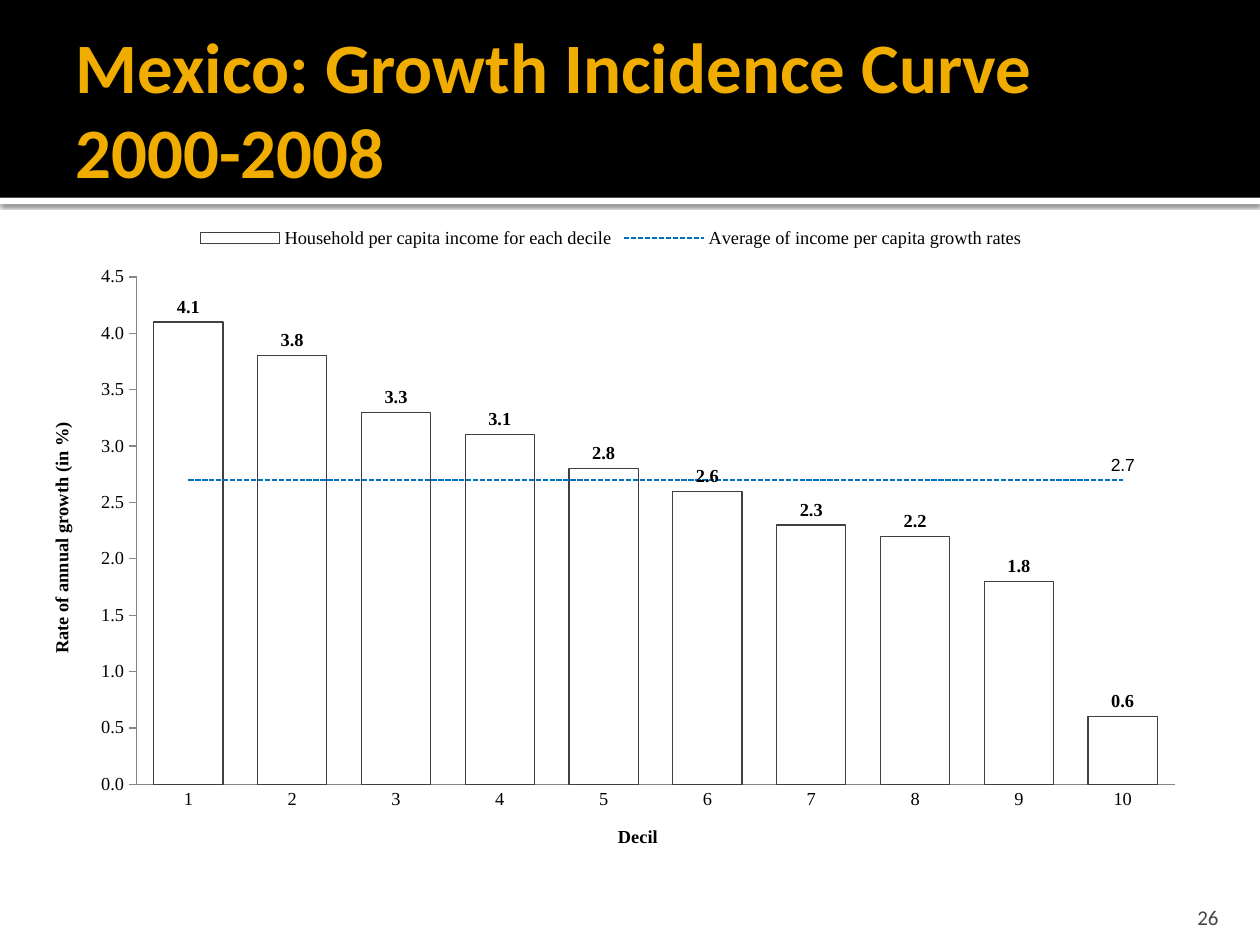
from dataclasses import dataclass

from lxml import etree
from pptx import Presentation, util as u
from pptx.chart.data import CategoryChartData
from pptx.dml.color import RGBColor
from pptx.enum import chart as charts, dml, shapes, text
from pptx.oxml import parse_xml
from pptx.oxml.ns import nsdecls, qn


@dataclass(frozen=True)
class Theme:
    """Colours, fonts and type sizes of the slide."""
    band: str = "000000"
    paper: str = "FFFFFF"
    title: str = "F0AD00"
    number: str = "454545"
    ink: str = "000000"
    outline: str = "404040"
    axis: str = "868686"
    average: str = "0070C0"
    heading_font: str = "Calibri"
    chart_font: str = "Times New Roman"
    point_font: str = "Arial"
    title_size: float = 40.5
    number_size: float = 12
    chart_size: float = 10.5
    point_size: float = 10


THEME = Theme()
VALUE_FORMAT = "#,##0.0"
DECILE_GROWTH = (4.1, 3.8, 3.3, 3.1, 2.8, 2.6, 2.3, 2.2, 1.8, 0.6)
AVERAGE_GROWTH = 2.7


def inches(*lengths):
    """Convert several lengths to inches."""
    return [u.Inches(length) for length in lengths]


def style_font(font, name, size, color, bold=False):
    """Set the face, size, colour and weight of a font."""
    font.name, font.size, font.bold = name, u.Pt(size), bold
    font.color.rgb = RGBColor.from_string(color)


def style_line(line, color, width):
    """Set the colour and width of a line."""
    line.color.rgb = RGBColor.from_string(color)
    line.width = u.Pt(width)


def set_margins(frame, left, top, right, bottom):
    """Set the four insets of a text frame."""
    frame.margin_left, frame.margin_top, frame.margin_right, frame.margin_bottom = inches(
        left, top, right, bottom)


def add_band(slide, box, color):
    """Add a plain filled rectangle."""
    band = slide.shapes.add_shape(shapes.MSO_SHAPE.RECTANGLE, *inches(*box))
    band.shadow.inherit = False
    band.fill.solid()
    band.fill.fore_color.rgb = RGBColor.from_string(color)
    band.line.fill.background()
    return band


def add_header(slide, box, wording):
    """Place the dark band, its shadowed edge and the title."""
    left, top, width, height = box
    edge = add_band(slide, (left, top + height, width, 0.05), THEME.paper)
    effects = edge.element.spPr.find(qn("a:effectLst"))
    effects.append(parse_xml(
        f'<a:outerShdw {nsdecls("a")} blurRad="{u.Pt(2.5)}" dist="{u.Pt(0.8)}" dir="5400000">'
        f'<a:srgbClr val="{THEME.band}"><a:alpha val="60000"/></a:srgbClr></a:outerShdw>'))
    add_band(slide, box, THEME.band)

    title = slide.shapes.title
    slide.shapes.element.append(title.element)
    title.left, title.top, title.width, title.height = inches(
        left + 0.5, top + 0.17, width - 1, height - 0.2)
    frame = title.text_frame
    frame.word_wrap = True
    frame.vertical_anchor = text.MSO_ANCHOR.MIDDLE
    set_margins(frame, 0.1, 0.05, 0.05, 0.05)
    paragraph = frame.paragraphs[0]
    paragraph.alignment = text.PP_ALIGN.LEFT
    paragraph.line_spacing = 1.0
    run = paragraph.add_run()
    run.text = wording
    style_font(run.font, THEME.heading_font, THEME.title_size, THEME.title, True)


def add_page_number(slide, box, number):
    """Place the page number at the bottom right."""
    frame = slide.shapes.add_textbox(*inches(*box)).text_frame
    frame.word_wrap = True
    frame.vertical_anchor = text.MSO_ANCHOR.BOTTOM
    set_margins(frame, 0.1, 0.05, 0.1, 0)
    paragraph = frame.paragraphs[0]
    paragraph.alignment = text.PP_ALIGN.RIGHT
    run = paragraph.add_run()
    run.text = number
    style_font(run.font, THEME.heading_font, THEME.number_size, THEME.number)


def move_last_series_to_line(chart):
    """Turn the last column series into a line on the same axes."""
    bar_plot = chart.element.find(".//" + qn("c:barChart"))
    series = bar_plot.findall(qn("c:ser"))[-1]
    for inversion in series.findall(qn("c:invertIfNegative")):
        series.remove(inversion)
    line_plot = parse_xml(
        f'<c:lineChart {nsdecls("c")}><c:grouping val="standard"/>'
        '<c:varyColors val="0"/><c:marker val="1"/></c:lineChart>')
    line_plot.insert(2, series)
    for axis in bar_plot.findall(qn("c:axId")):
        etree.SubElement(line_plot, qn("c:axId")).set("val", axis.get("val"))
    bar_plot.addnext(line_plot)


def set_plot_layout(chart, x, y, w, h):
    """Fix the inner plot area as fractions of the chart."""
    area = chart.element.find(".//" + qn("c:plotArea"))
    for old in area.findall(qn("c:layout")):
        area.remove(old)
    sizes = "".join(f'<c:{key} val="{value}"/>' for key, value in zip("xywh", (x, y, w, h)))
    area.insert(0, parse_xml(
        f'<c:layout {nsdecls("c")}><c:manualLayout><c:layoutTarget val="inner"/>'
        f'<c:xMode val="edge"/><c:yMode val="edge"/>{sizes}</c:manualLayout></c:layout>'))


def style_axis(axis, wording, tick):
    """Title an axis and set its line, ticks and grid."""
    axis.has_major_gridlines = False
    axis.major_tick_mark = tick
    axis.minor_tick_mark = charts.XL_TICK_MARK.NONE
    style_line(axis.format.line, THEME.axis, 0.75)
    run = axis.axis_title.text_frame.paragraphs[0].add_run()
    run.text = wording
    style_font(run.font, THEME.chart_font, THEME.chart_size, THEME.ink, True)


def add_growth_chart(slide, box):
    """Place the decile columns with the average line."""
    data = CategoryChartData(number_format=VALUE_FORMAT)
    data.categories = [str(decile + 1) for decile in range(len(DECILE_GROWTH))]
    data.add_series("Household per capita income for each decile", DECILE_GROWTH)
    data.add_series("Average of income per capita growth rates",
                    [AVERAGE_GROWTH] * len(DECILE_GROWTH))
    chart = slide.shapes.add_chart(
        charts.XL_CHART_TYPE.COLUMN_CLUSTERED, *inches(*box), data).chart
    chart.has_title = False
    style_font(chart.font, THEME.chart_font, THEME.chart_size, THEME.ink)
    move_last_series_to_line(chart)
    set_plot_layout(chart, 0.095, 0.094, 0.886, 0.76)

    chart.has_legend = True
    chart.legend.position = charts.XL_LEGEND_POSITION.TOP
    chart.legend.include_in_layout = False
    style_axis(chart.category_axis, "Decil", charts.XL_TICK_MARK.NONE)
    values = chart.value_axis
    style_axis(values, "Rate of annual growth (in %)", charts.XL_TICK_MARK.OUTSIDE)
    values.minimum_scale, values.maximum_scale, values.major_unit = 0, 4.5, 0.5
    values.tick_labels.number_format = VALUE_FORMAT
    values.tick_labels.number_format_is_linked = False

    columns, averages = chart.plots
    columns.gap_width = 50
    columns.vary_by_categories = False
    deciles = columns.series[0]
    deciles.format.fill.solid()
    deciles.format.fill.fore_color.rgb = RGBColor.from_string(THEME.paper)
    style_line(deciles.format.line, THEME.outline, 0.75)
    labels = deciles.data_labels
    labels.show_value = True
    labels.number_format, labels.number_format_is_linked = VALUE_FORMAT, False
    labels.position = charts.XL_LABEL_POSITION.OUTSIDE_END
    style_font(labels.font, THEME.chart_font, THEME.chart_size, THEME.ink, True)

    average = averages.series[0]
    average.smooth = False
    average.marker.style = charts.XL_MARKER_STYLE.NONE
    style_line(average.format.line, THEME.average, 1)
    average.format.line.dash_style = dml.MSO_LINE.SQUARE_DOT
    average.data_labels.show_value = False
    label = average.points[len(DECILE_GROWTH) - 1].data_label
    style_font(label.font, THEME.point_font, THEME.point_size, THEME.ink)
    label.position = charts.XL_LABEL_POSITION.ABOVE


def main():
    """Build and save the slide."""
    presentation = Presentation()
    presentation.slide_width, presentation.slide_height = inches(10, 7.5)
    slide = presentation.slides.add_slide(presentation.slide_layouts[5])
    add_header(slide, (0, 0, 10, 1.57), "Mexico: Growth Incidence Curve 2000-2008")
    add_page_number(slide, (8.97, 7.08, 0.8, 0.3), "26")
    add_growth_chart(slide, (0.2, 1.7, 9.3, 5.3))
    presentation.save("out.pptx")


if __name__ == "__main__":
    main()
